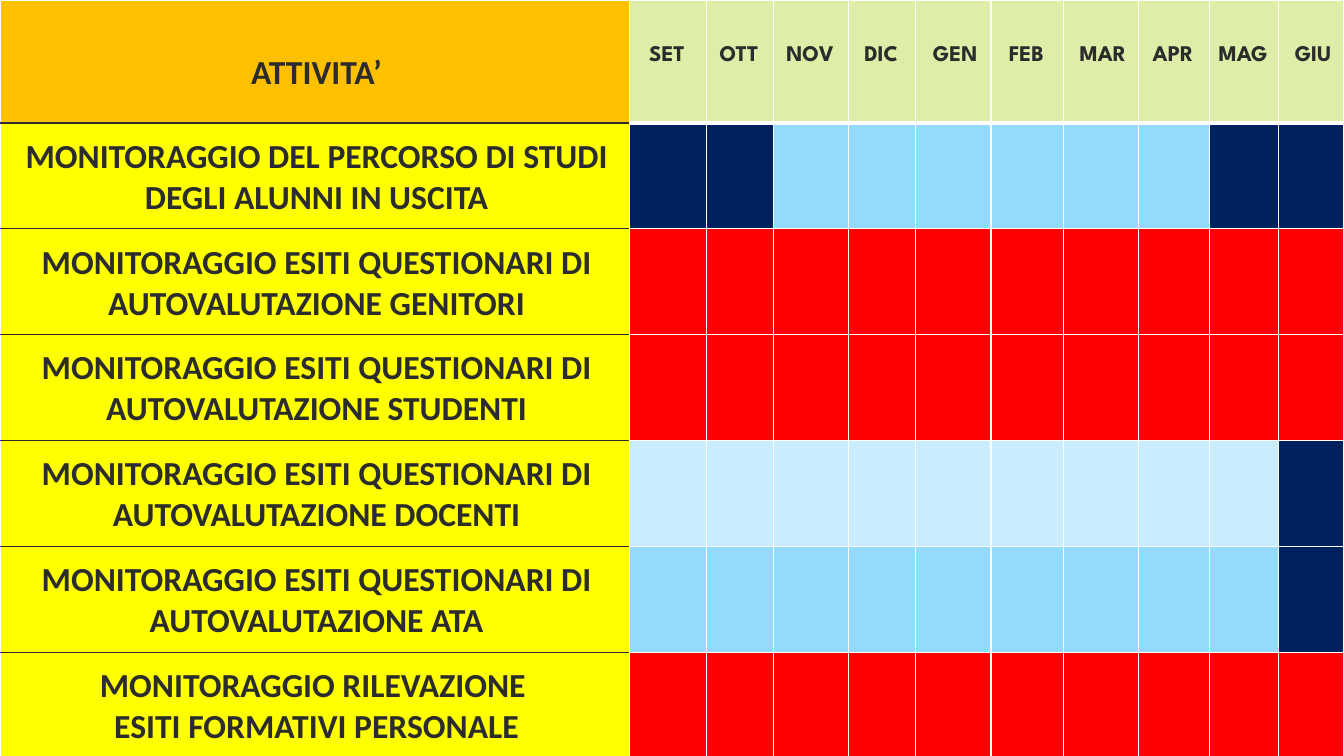
import pptx
import pptx.util
import pptx.dml.color
import pptx.enum.text
import pptx.oxml
from pptx.util import Inches
from pptx.dml.color import RGBColor

# Content: months, then each activity with its ten month codes
HEADING = "ATTIVITA’"
MONTHS = ["SET ", "OTT ", "NOV ", "DIC ", " GEN ", "FEB ", " MAR ", "APR ", "MAG ", "GIU"]
ACTIVITIES = [
    ("MONITORAGGIO DEL PERCORSO DI STUDI DEGLI ALUNNI IN USCITA", "NNSSSSSSNN"),
    ("MONITORAGGIO ESITI QUESTIONARI DI AUTOVALUTAZIONE GENITORI", "R" * 10),
    ("MONITORAGGIO ESITI QUESTIONARI DI AUTOVALUTAZIONE STUDENTI", "R" * 10),
    ("MONITORAGGIO ESITI QUESTIONARI DI AUTOVALUTAZIONE DOCENTI", "PPPPPPPPPN"),
    ("MONITORAGGIO ESITI QUESTIONARI DI AUTOVALUTAZIONE ATA", "SSSSSSSSSN"),
    ("MONITORAGGIO RILEVAZIONE \nESITI FORMATIVI PERSONALE", "R" * 10),
]

# Colours
WHITE = RGBColor(0xFF, 0xFF, 0xFF)
DARK = RGBColor(0x2C, 0x2C, 0x2C)
ORANGE = RGBColor(0xFF, 0xC0, 0x00)
LIME = RGBColor(0xDC, 0xEE, 0xA7)
YELLOW = RGBColor(0xFF, 0xFF, 0x00)
MONTH_FILLS = {
    "N": RGBColor(0x00, 0x20, 0x60),
    "S": RGBColor(0x93, 0xDA, 0xFB),
    "P": RGBColor(0xC9, 0xED, 0xFD),
    "R": RGBColor(0xFF, 0x00, 0x00),
}

# Layout
COL_WIDTHS = [6.24, 0.77, 0.66, 0.75, 0.66, 0.75, 0.72, 0.74, 0.71, 0.68, 0.65]
ROW_HEIGHTS = [1.22] + [1.05] * len(ACTIVITIES)
MONTH_TOP = 0.35


def set_cell(cell, fill, top=(WHITE, 1), bottom=(WHITE, 1)):
    """Fill a cell and draw its four borders, each a colour and a width."""
    tc_pr = cell._tc.get_or_add_tcPr()
    edges = {"L": (WHITE, 1), "R": (WHITE, 1), "T": top, "B": bottom}
    for side, (color, width) in edges.items():
        tc_pr.append(pptx.oxml.parse_xml(
            f'<a:ln{side} xmlns:a="http://schemas.openxmlformats.org/drawingml/2006/main"'
            f' w="{pptx.util.Pt(width)}"><a:solidFill><a:srgbClr val="{color}"/>'
            f'</a:solidFill></a:ln{side}>'))
    cell.fill.solid()
    cell.fill.fore_color.rgb = fill


def write(cell, text, font, size, spacing=1.0, top=0.03):
    cell.margin_left, cell.margin_right = Inches(0.07), Inches(0.03)
    cell.margin_top, cell.margin_bottom = Inches(top), 0
    cell.text_frame.text = text
    for p in cell.text_frame.paragraphs:
        p.alignment = pptx.enum.text.PP_ALIGN.CENTER
        p.line_spacing = spacing
        for r in p.runs:
            r.font.name, r.font.size = font, pptx.util.Pt(size)
            r.font.bold = True
            r.font.color.rgb = DARK


prs = pptx.Presentation()
prs.slide_width, prs.slide_height = Inches(13.33), Inches(7.5)
s = prs.slides.add_slide(prs.slide_layouts[6])

# Table grid
table = s.shapes.add_table(len(ROW_HEIGHTS), len(COL_WIDTHS), 0, 0,
                           prs.slide_width, prs.slide_height).table
table.first_row = table.horz_banding = False
for column, width in zip(table.columns, COL_WIDTHS):
    column.width = Inches(width)
for row, height in zip(table.rows, ROW_HEIGHTS):
    row.height = Inches(height)

# Header row
heading = table.cell(0, 0)
set_cell(heading, ORANGE, bottom=(DARK, 1))
write(heading, HEADING, "Calibri", 24, spacing=1.5)
heading.vertical_anchor = pptx.enum.text.MSO_ANCHOR.MIDDLE
for col, month in enumerate(MONTHS, 1):
    cell = table.cell(0, col)
    set_cell(cell, LIME, bottom=(WHITE, 3))
    write(cell, month, "League Spartan", 16, spacing=1.5, top=MONTH_TOP)

# Activity rows
for row, (activity, codes) in enumerate(ACTIVITIES, 1):
    label = table.cell(row, 0)
    last = row == len(ACTIVITIES)
    set_cell(label, YELLOW, top=(DARK, 1), bottom=(WHITE if last else DARK, 1))
    write(label, activity, "Calibri", 24)
    label.vertical_anchor = pptx.enum.text.MSO_ANCHOR.MIDDLE
    for col, code in enumerate(codes, 1):
        set_cell(table.cell(row, col), MONTH_FILLS[code], top=(WHITE, 3 if row == 1 else 1))

prs.save("out.pptx")
